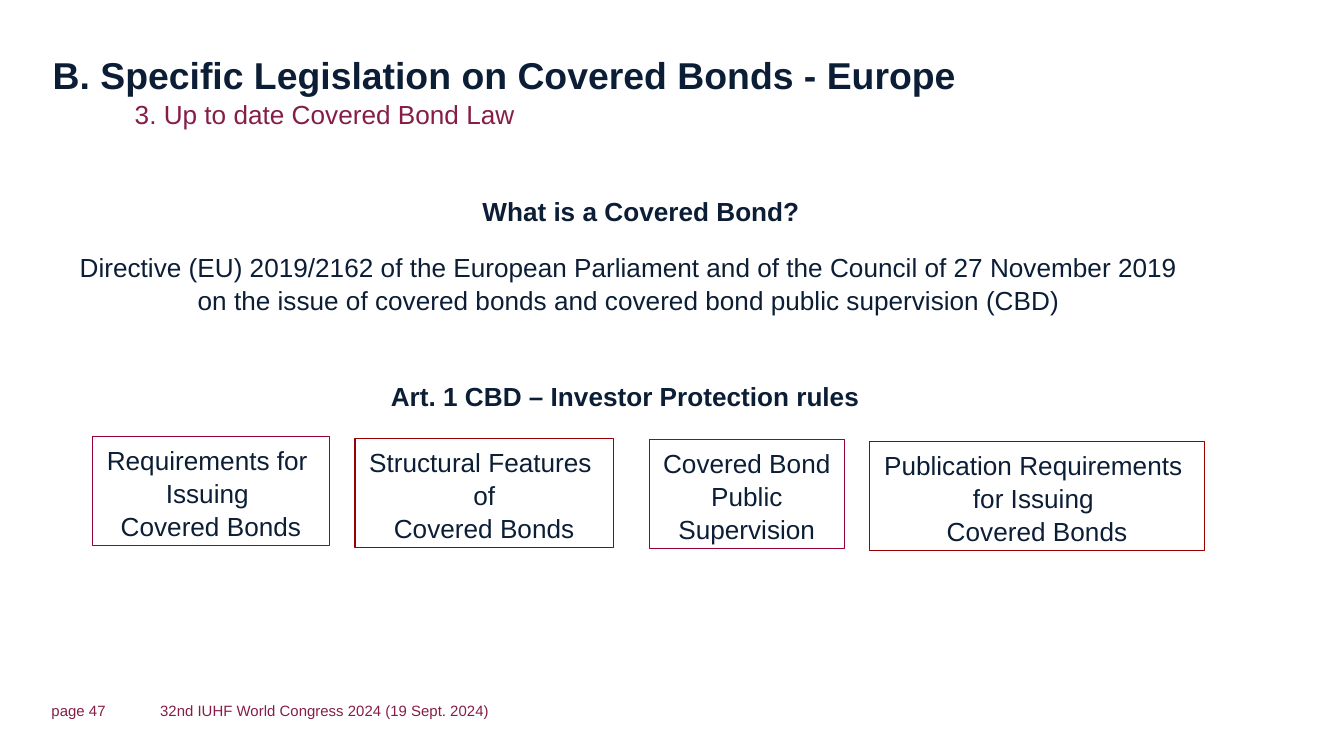
from dataclasses import dataclass

from pptx import Presentation
from pptx.dml.color import RGBColor
from pptx.enum.shapes import MSO_SHAPE
from pptx.enum.text import MSO_ANCHOR, MSO_AUTO_SIZE, PP_ALIGN
from pptx.util import Pt

RECTANGLE = MSO_SHAPE.RECTANGLE
TOP, MIDDLE = MSO_ANCHOR.TOP, MSO_ANCHOR.MIDDLE
LEFT, CENTER = PP_ALIGN.LEFT, PP_ALIGN.CENTER
NO_AUTOFIT = MSO_AUTO_SIZE.NONE
TITLE_ONLY = 5


@dataclass(frozen=True)
class Theme:
    font: str = "Arial"
    navy: RGBColor = RGBColor(0x0C, 0x1E, 0x36)
    plum: RGBColor = RGBColor(0x86, 0x1D, 0x48)
    crimson: RGBColor = RGBColor(0x99, 0x00, 0x33)
    red: RGBColor = RGBColor(0x99, 0x00, 0x00)
    title_size: int = 20
    body_size: int = 14
    footer_size: int = 8
    line_spacing: float = 1.05
    border: float = 0.75


THEME = Theme()


def write(shape, lines, size=THEME.body_size, color=THEME.navy, bold=False,
          align=LEFT, anchor=TOP, wrap=True, inset=True):
    """Fill the shape with one paragraph per line and return its paragraphs."""
    frame = shape.text_frame
    frame.text = "\n".join(lines)
    frame.auto_size = NO_AUTOFIT
    frame.word_wrap = wrap
    frame.vertical_anchor = anchor
    across, down = (7.2, 3.6) if inset else (0, 0)
    frame.margin_left = frame.margin_right = Pt(across)
    frame.margin_top = frame.margin_bottom = Pt(down)
    for paragraph in frame.paragraphs:
        paragraph.alignment = align
        paragraph.line_spacing = THEME.line_spacing
        paragraph.space_before = Pt(0)
        font = paragraph.font
        font.name, font.size, font.bold = THEME.font, Pt(size), bold
        font.color.rgb = color
    return frame.paragraphs


def add_text(slide, left, top, width, height, lines, **style):
    box = slide.shapes.add_textbox(Pt(left), Pt(top), Pt(width), Pt(height))
    return write(box, lines, **style)


def add_heading(slide, left, top, width):
    title = slide.shapes.title
    title.left, title.top = Pt(left), Pt(top)
    title.width, title.height = Pt(width), Pt(24.5)
    write(title, ["B. Specific Legislation on Covered Bonds - Europe"],
          size=THEME.title_size, bold=True, inset=False)
    add_text(slide, left + 44, top + 25.2, 424, 17.3,
             ["3. Up to date Covered Bond Law"], color=THEME.plum, inset=False)


def add_definition(slide, left, top, width):
    add_text(slide, left, top, width, 24.5, ["What is a Covered Bond?"],
             bold=True, align=CENTER)
    *_, article = add_text(
        slide, left, top + 30.2, width - 13, 92.2,
        ["Directive (EU) 2019/2162 of the European Parliament and of the "
         "Council of 27 November 2019",
         "on the issue of covered bonds and covered bond public supervision (CBD)",
         "Art. 1 CBD – Investor Protection rules "],
        align=CENTER, wrap=False)
    article.space_before = Pt(2 * 17)
    article.font.bold = True


def add_rules(slide, left, top, height):
    """Row of bordered boxes; each entry gives x and y offset, width, border, lines."""
    rules = [
        (0, 0, 126.8, THEME.crimson,
         ["Requirements for ", "Issuing ", "Covered Bonds"]),
        (140.6, 1.2, 138.4, THEME.red,
         ["Structural Features ", "of", "Covered Bonds"]),
        (298.2, 1.6, 104.6, THEME.crimson,
         ["Covered Bond", "Public", "Supervision"]),
        (416.4, 2.8, 179.2, THEME.red,
         ["Publication Requirements ", "for Issuing ", "Covered Bonds"]),
    ]
    for x, y, width, border, lines in rules:
        rule = slide.shapes.add_shape(
            RECTANGLE, Pt(left + x), Pt(top + y), Pt(width), Pt(height))
        rule.shadow.inherit = False
        rule.fill.background()
        rule.line.color.rgb = border
        rule.line.width = Pt(THEME.border)
        write(rule, lines, align=CENTER, wrap=False)


def add_footer(slide, left, top):
    for x, width, text in [
        (0, 45.4, "page 47"),
        (58.2, 321, "32nd IUHF World Congress 2024 (19 Sept. 2024)"),
    ]:
        add_text(slide, left + x, top, width, 9.4, [text],
                 size=THEME.footer_size, color=THEME.plum,
                 anchor=MIDDLE, inset=False)


def main():
    presentation = Presentation()
    presentation.slide_width, presentation.slide_height = Pt(720), Pt(405)
    slide = presentation.slides.add_slide(
        presentation.slide_layouts[TITLE_ONLY])
    add_heading(slide, left=28.2, top=26.8, width=664)
    add_definition(slide, left=34.4, top=100.2, width=618)
    add_rules(slide, left=49.6, top=233.8, height=58.4)
    add_footer(slide, left=27.6, top=376)
    presentation.save("out.pptx")


if __name__ == "__main__":
    main()
